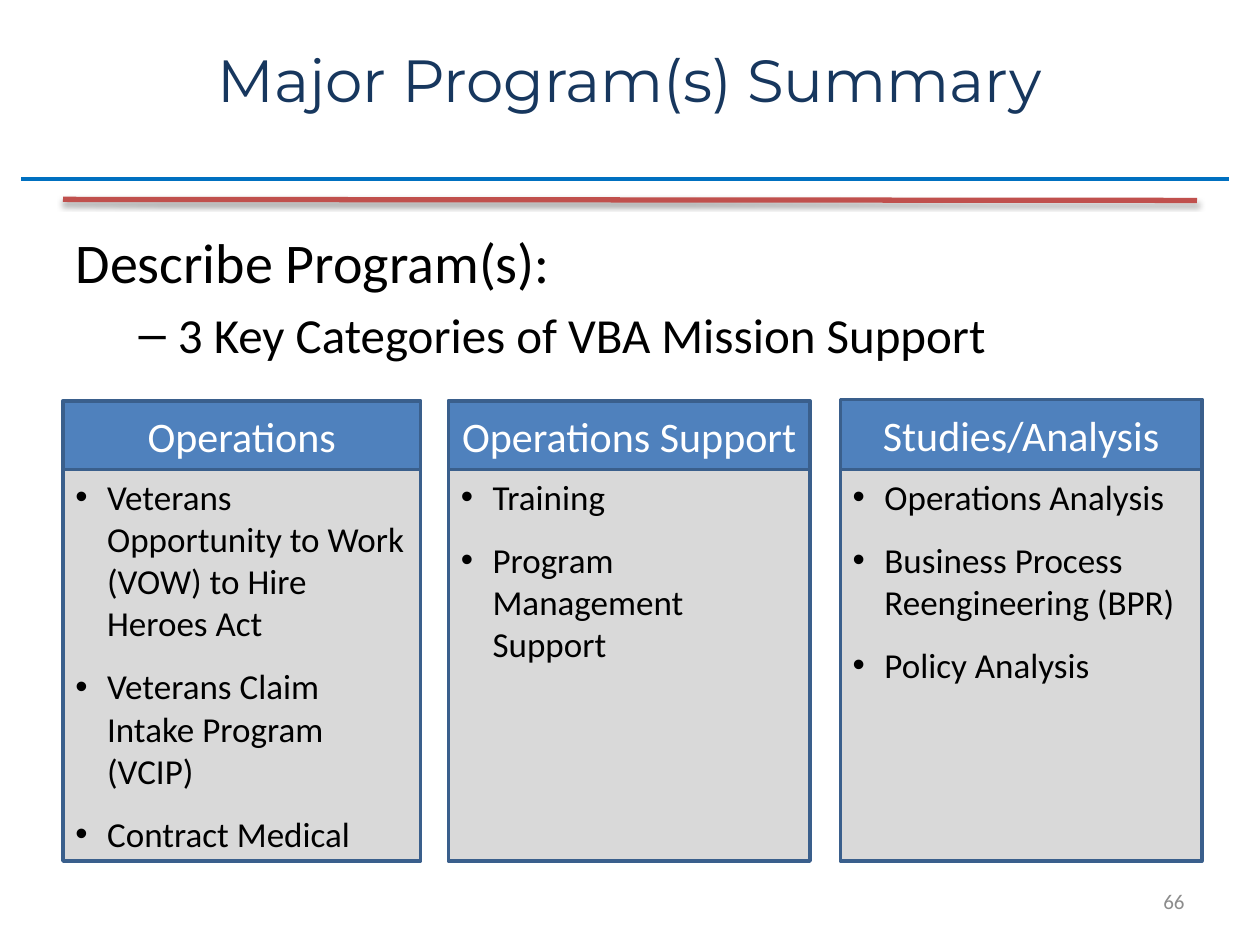
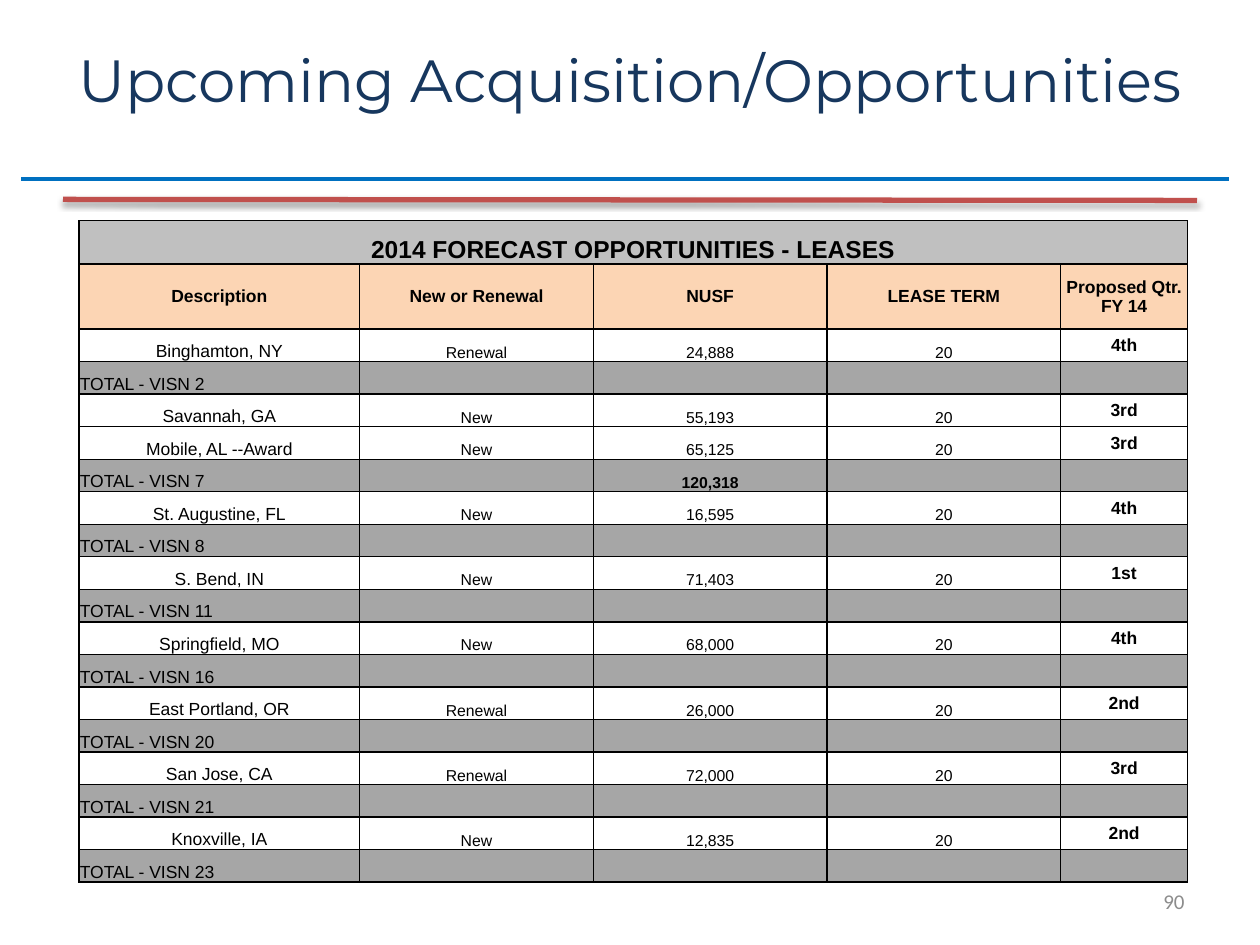
from lxml import etree
from pptx import Presentation
from pptx.dml.color import RGBColor
from pptx.enum.shapes import MSO_CONNECTOR, MSO_SHAPE
from pptx.enum.text import MSO_ANCHOR, MSO_AUTO_SIZE, PP_ALIGN
from pptx.oxml import parse_xml
from pptx.oxml.ns import nsdecls, qn
from pptx.util import Cm, Pt

NAVY = RGBColor(0x17, 0x37, 0x5E)
RULE_BLUE = RGBColor(0x00, 0x70, 0xC0)
RULE_RED = RGBColor(0xC0, 0x50, 0x4D)
CARD_BLUE = RGBColor(0x4F, 0x81, 0xBD)
CARD_EDGE = RGBColor(0x3A, 0x5F, 0x8C)
CARD_GREY = RGBColor(0xD9, 0xD9, 0xD9)
BAND_GREY = RGBColor(0xC0, 0xC0, 0xC0)
TOTAL_GREY = RGBColor(0xA6, 0xA6, 0xA6)
PEACH = RGBColor(0xFC, 0xD5, 0xB4)
NUMBER_GREY = RGBColor(0x8C, 0x8C, 0x8C)
BLACK = RGBColor(0, 0, 0)
WHITE = RGBColor(0xFF, 0xFF, 0xFF)

LEFT, CENTER, RIGHT = PP_ALIGN.LEFT, PP_ALIGN.CENTER, PP_ALIGN.RIGHT
TOP, MIDDLE, BOTTOM = MSO_ANCHOR.TOP, MSO_ANCHOR.MIDDLE, MSO_ANCHOR.BOTTOM
NO_FIT = MSO_AUTO_SIZE.NONE
STRAIGHT = MSO_CONNECTOR.STRAIGHT
RECTANGLE = MSO_SHAPE.RECTANGLE

TITLE_FONT, BODY_FONT, TABLE_FONT = "Montserrat", "Calibri", "Arial"
TITLE_AND_BODY, TITLE_ONLY = 1, 5

CARDS = [
    (1.27, 8.08, 7.21, "Operations",
     ["Veterans Opportunity to Work (VOW) to Hire Heroes Act",
      "Veterans Claim Intake Program (VCIP)",
      "Contract Medical"]),
    (9.04, 8.08, 7.29, "Operations Support",
     ["Training", "Program Management Support"]),
    (16.94, 8.05, 7.29, "Studies/Analysis",
     ["Operations Analysis",
      "Business Process Reengineering (BPR)",
      "Policy Analysis"]),
]

LEASE_TITLE = "2014 FORECAST OPPORTUNITIES - LEASES"
LEASE_HEADER = ["Description", "New or Renewal", "NUSF", "LEASE TERM",
                "Proposed Qtr. FY 14"]
LEASES = [
    ["Binghamton, NY", "Renewal", "24,888", "20", "4th"],
    ["TOTAL - VISN 2", "", "", "", ""],
    ["Savannah, GA", "New", "55,193", "20", "3rd"],
    ["Mobile, AL --Award", "New", "65,125", "20", "3rd"],
    ["TOTAL - VISN 7", "", "120,318", "", ""],
    ["St. Augustine, FL", "New", "16,595", "20", "4th"],
    ["TOTAL - VISN 8", "", "", "", ""],
    ["S. Bend, IN", "New", "71,403", "20", "1st"],
    ["TOTAL - VISN 11", "", "", "", ""],
    ["Springfield, MO", "New", "68,000", "20", "4th"],
    ["TOTAL - VISN 16", "", "", "", ""],
    ["East Portland, OR", "Renewal", "26,000", "20", "2nd"],
    ["TOTAL - VISN 20", "", "", "", ""],
    ["San Jose, CA", "Renewal", "72,000", "20", "3rd"],
    ["TOTAL - VISN 21", "", "", "", ""],
    ["Knoxville, IA", "New", "12,835", "20", "2nd"],
    ["TOTAL - VISN 23", "", "", "", ""],
]


class Deck:
    """Holds the shared style and the current slide."""

    def __init__(self):
        self.prs = Presentation()
        self.prs.slide_width, self.prs.slide_height = Cm(25.4), Cm(19.05)
        self.s = None

    def new_slide(self, layout, title, number):
        self.s = self.prs.slides.add_slide(self.prs.slide_layouts[layout])
        self.number(number)
        self.rule(0.43, 3.61, 24.77, 3.61, RULE_BLUE, 2)
        self.rule(1.27, 4.02, 24.13, 4.04, RULE_RED, 3, shadow=True)
        tf = self.place(self.s.shapes.title, 1.27, 0, 22.86, 3.18, MIDDLE)
        self.add_text(tf.paragraphs[0], title, TITLE_FONT, 34, NAVY, CENTER)

    def place(self, sp, left, top, width, height, anchor):
        sp.left, sp.top = Cm(left), Cm(top)
        sp.width, sp.height = Cm(width), Cm(height)
        tf = sp.text_frame
        tf.word_wrap = True
        tf.auto_size = NO_FIT
        tf.vertical_anchor = anchor
        return tf

    def add_text(self, p, text, font, size, color, align=LEFT, bold=False):
        p.alignment = align
        r = p.add_run()
        r.text = text
        r.font.name, r.font.size, r.font.bold = font, Pt(size), bold
        r.font.color.rgb = color

    def number(self, number):
        sp = self.s.shapes.add_textbox(0, 0, 0, 0)
        tf = self.place(sp, 18.2, 17.66, 5.93, 1.01, MIDDLE)
        self.add_text(tf.paragraphs[0], number, BODY_FONT, 12, NUMBER_GREY,
                      RIGHT)

    def rule(self, x1, y1, x2, y2, color, width, shadow=False):
        line = self.s.shapes.add_connector(
            STRAIGHT, Cm(x1), Cm(y1), Cm(x2), Cm(y2))
        line.line.color.rgb, line.line.width = color, Pt(width)
        effects = etree.SubElement(line._element.spPr, qn("a:effectLst"))
        if shadow:
            effects.append(parse_xml(
                f'<a:outerShdw {nsdecls("a")} blurRad="40000" dist="23000" '
                'dir="5400000" rotWithShape="0"><a:srgbClr val="000000">'
                '<a:alpha val="35000"/></a:srgbClr></a:outerShdw>'))

    def body(self, heading, detail):
        tf = self.place(self.s.placeholders[1], 1.27, 4.45, 22.86, 12.57, TOP)
        p = tf.paragraphs[0]
        etree.SubElement(p._p.get_or_add_pPr(), qn("a:buNone"))
        p.space_before = Pt(0)
        self.add_text(p, heading, BODY_FONT, 32, BLACK)
        p = tf.add_paragraph()
        p.level = 1
        self.add_text(p, detail, BODY_FONT, 28, BLACK)

    def box(self, parent, left, top, width, height, fill, anchor):
        sp = parent.shapes.add_shape(RECTANGLE, 0, 0, 0, 0)
        sp.shadow.inherit = False
        sp.fill.solid()
        sp.fill.fore_color.rgb = fill
        sp.line.color.rgb, sp.line.width = CARD_EDGE, Pt(2)
        return self.place(sp, left, top, width, height, anchor)

    def bullet(self, p, text):
        pPr = p._p.get_or_add_pPr()
        pPr.set("marL", str(Cm(0.64)))
        pPr.set("indent", str(-Cm(0.64)))
        etree.SubElement(pPr, qn("a:buFont")).set("typeface", "Arial")
        etree.SubElement(pPr, qn("a:buChar")).set("char", "•")
        p.space_after = Pt(12)
        self.add_text(p, text, BODY_FONT, 20, BLACK)

    def card(self, left, top, width, heading, items):
        group = self.s.shapes.add_group_shape()
        split, bottom = 9.47, 17.36
        tf = self.box(group, left, top, width, split - top, CARD_BLUE, MIDDLE)
        self.add_text(tf.paragraphs[0], heading, BODY_FONT, 24, WHITE, CENTER)
        tf = self.box(group, left, split, width, bottom - split, CARD_GREY, TOP)
        for i, item in enumerate(items):
            self.bullet(tf.add_paragraph() if i else tf.paragraphs[0], item)
        group._element.recalculate_extents()

    def cell(self, cell, text, size, fill=None, align=CENTER, anchor=BOTTOM,
             bold=False, top=1, bottom=1):
        tcPr = cell._tc.get_or_add_tcPr()
        for side, width in zip("LRTB", (1, 1, top, bottom)):
            tcPr.append(parse_xml(
                f'<a:ln{side} {nsdecls("a")} w="{int(Pt(width))}">'
                f'<a:solidFill><a:srgbClr val="{BLACK}"/></a:solidFill>'
                f'</a:ln{side}>'))
        if fill is None:
            cell.fill.background()
        else:
            cell.fill.solid()
            cell.fill.fore_color.rgb = fill
        cell.margin_left = cell.margin_right = cell.margin_top = Cm(0.02)
        cell.margin_bottom = 0
        cell.vertical_anchor = anchor
        p = cell.text_frame.paragraphs[0]
        if text:
            self.add_text(p, text, TABLE_FONT, size, BLACK, align, bold)
        else:
            end = etree.SubElement(p._p, qn("a:endParaRPr"))
            end.set("sz", str(size * 100))

    def lease_table(self, title, header, leases):
        widths, height = [5.66, 4.71, 4.71, 4.71, 2.56], 13.34
        title_height, header_height = 0.87, 1.31
        frame = self.s.shapes.add_table(
            len(leases) + 2, len(header), Cm(1.59), Cm(4.45),
            Cm(sum(widths)), Cm(height))
        table = frame.table
        table.first_row = table.horz_banding = False
        for column, width in zip(table.columns, widths):
            column.width = Cm(width)
        lease_height = (height - title_height - header_height) / len(leases)
        heights = [title_height, header_height] + [lease_height] * len(leases)
        for row, row_height in zip(table.rows, heights):
            row.height = Cm(row_height)

        table.cell(0, 0).merge(table.cell(0, len(header) - 1))
        for c, text in enumerate(header):
            self.cell(table.cell(0, c), "" if c else title, 14, BAND_GREY,
                      bold=True)
            self.cell(table.cell(1, c), text, 10, PEACH, anchor=MIDDLE,
                      bold=True)

        after_city = False
        for i, lease in enumerate(leases, 2):
            is_total = lease[0].startswith("TOTAL")
            for c, text in enumerate(lease):
                is_quarter = c == len(header) - 1
                fill = TOTAL_GREY if is_total else WHITE
                self.cell(
                    table.cell(i, c), text,
                    size=10 if c == 0 or is_quarter else 9,
                    fill=None if is_quarter and not is_total else fill,
                    align=LEFT if is_total and c == 0 else CENTER,
                    anchor=MIDDLE if is_quarter else BOTTOM,
                    bold=is_quarter or (is_total and c > 0),
                    top=0.5 if after_city else 1,
                    bottom=1 if is_total else 0.5)
            after_city = not is_total


def main():
    deck = Deck()
    deck.new_slide(TITLE_AND_BODY, "Major Program(s) Summary", "66")
    deck.body("Describe Program(s):", "3 Key Categories of VBA Mission Support")
    for card in CARDS:
        deck.card(*card)

    deck.new_slide(TITLE_ONLY, "Upcoming Acquisition/Opportunities", "90")
    deck.lease_table(LEASE_TITLE, LEASE_HEADER, LEASES)
    deck.prs.save("out.pptx")


if __name__ == "__main__":
    main()
